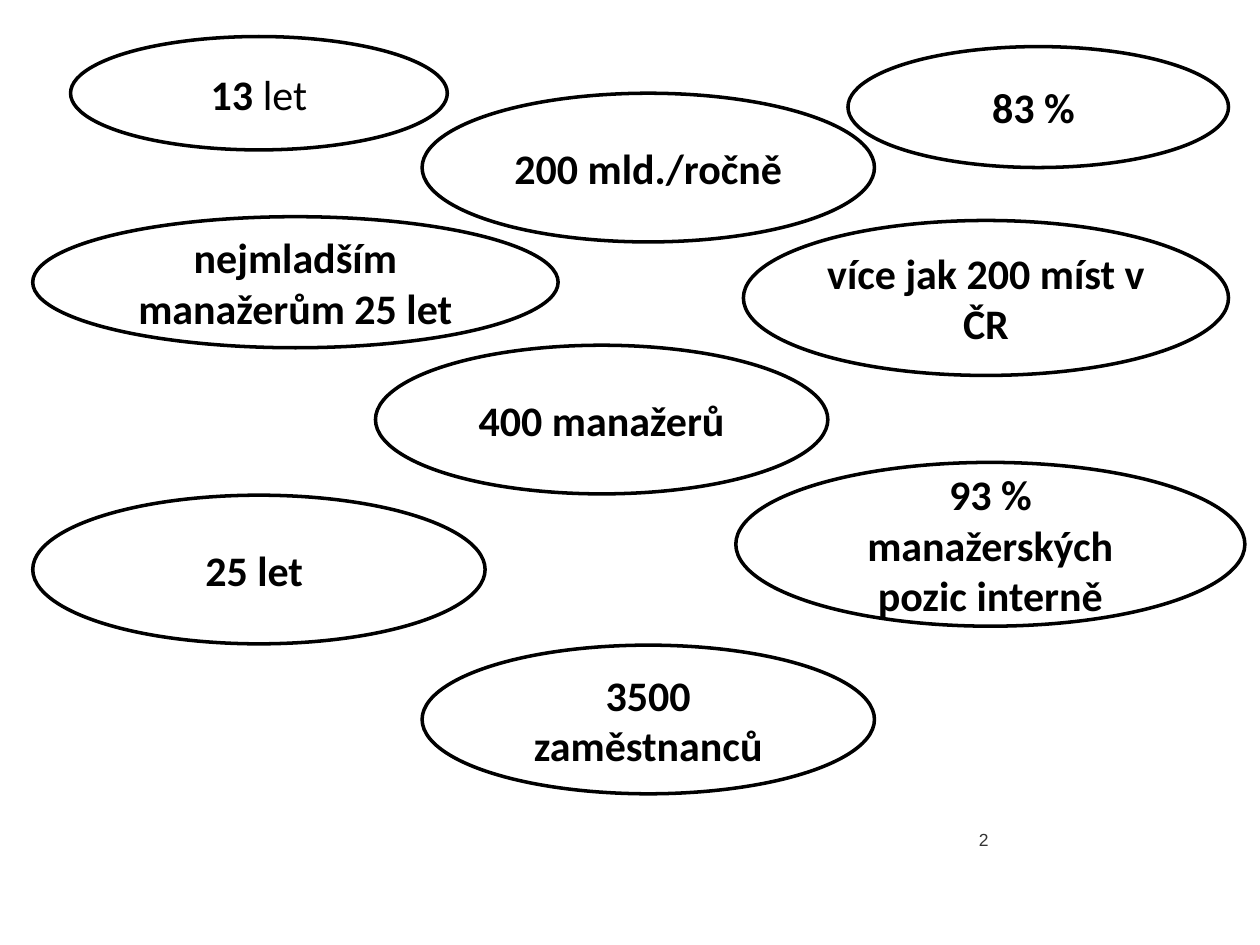
from pptx import Presentation
from pptx.dml.color import RGBColor as RGB
from pptx.enum.shapes import MSO_SHAPE as SHAPE
from pptx.enum.text import MSO_ANCHOR as ANCHOR, MSO_AUTO_SIZE as FIT, PP_ALIGN as ALIGN
from pptx.util import Inches, Pt

COLORS = {"paper": "FFFFFF", "ink": "000000", "grey": "333333"}
FACT = {"name": "Calibri", "size": Pt(24), "bold": True}
PLAIN = {**FACT, "bold": False}
PAGE = {"name": "Arial", "size": Pt(10)}

MID = (3.59, 1.18)  # size shared by the four regular ovals
FACTS = [
    (5.84, 3.67, (4.04, 1.3), "93 % manažerských pozic interně"),
    (6.73, 0.37, (3.02, 0.96), "83 % "),
    (0.26, 1.72, (4.17, 1.04), "nejmladším manažerům 25 let"),
    (5.9, 1.75, (3.85, 1.23), "více jak 200 míst v ČR"),
    (3.35, 0.74, MID, "200 mld./ročně"),
    (0.56, 0.29, (2.99, 0.9), "13 ", "let"),
    (2.98, 2.74, MID, "400 manažerů"),
    (3.35, 5.12, MID, "3500 zaměstnanců"),
    (0.26, 3.93, MID, "25 let "),
]


def color(key):
    return RGB.from_string(COLORS[key])


def add_run(para, text, style, ink):
    run = para.add_run()
    run.text = text
    for key, value in style.items():
        setattr(run.font, key, value)
    run.font.color.rgb = color(ink)


def add_oval(slide, left, top, size, text, tail=""):
    """Draw an outlined oval with bold text and an optional plain tail."""
    box = [Inches(n) for n in (left, top, *size)]
    oval = slide.shapes.add_shape(SHAPE.OVAL, *box)
    oval.shadow.inherit = False
    oval.fill.solid()
    oval.fill.fore_color.rgb = color("paper")
    oval.line.color.rgb = color("ink")
    oval.line.width = Pt(2)
    frame = oval.text_frame
    frame.word_wrap = True
    frame.vertical_anchor = ANCHOR.MIDDLE
    para = frame.paragraphs[0]
    para.alignment = ALIGN.CENTER
    add_run(para, text, FACT, "ink")
    if tail:
        add_run(para, tail, PLAIN, "ink")


def add_page(slide, text):
    box = [Inches(n) for n in (7.67, 6.53, 0.5, 0.27)]
    frame = slide.shapes.add_textbox(*box).text_frame
    frame.word_wrap = True
    frame.auto_size = FIT.SHAPE_TO_FIT_TEXT
    add_run(frame.paragraphs[0], text, PAGE, "grey")


def main():
    deck = Presentation()
    deck.slide_width, deck.slide_height = Inches(10), Inches(7.5)
    slide = deck.slides.add_slide(deck.slide_layouts[6])
    add_page(slide, "2")
    for fact in FACTS:
        add_oval(slide, *fact)
    deck.save("out.pptx")


if __name__ == "__main__":
    main()
